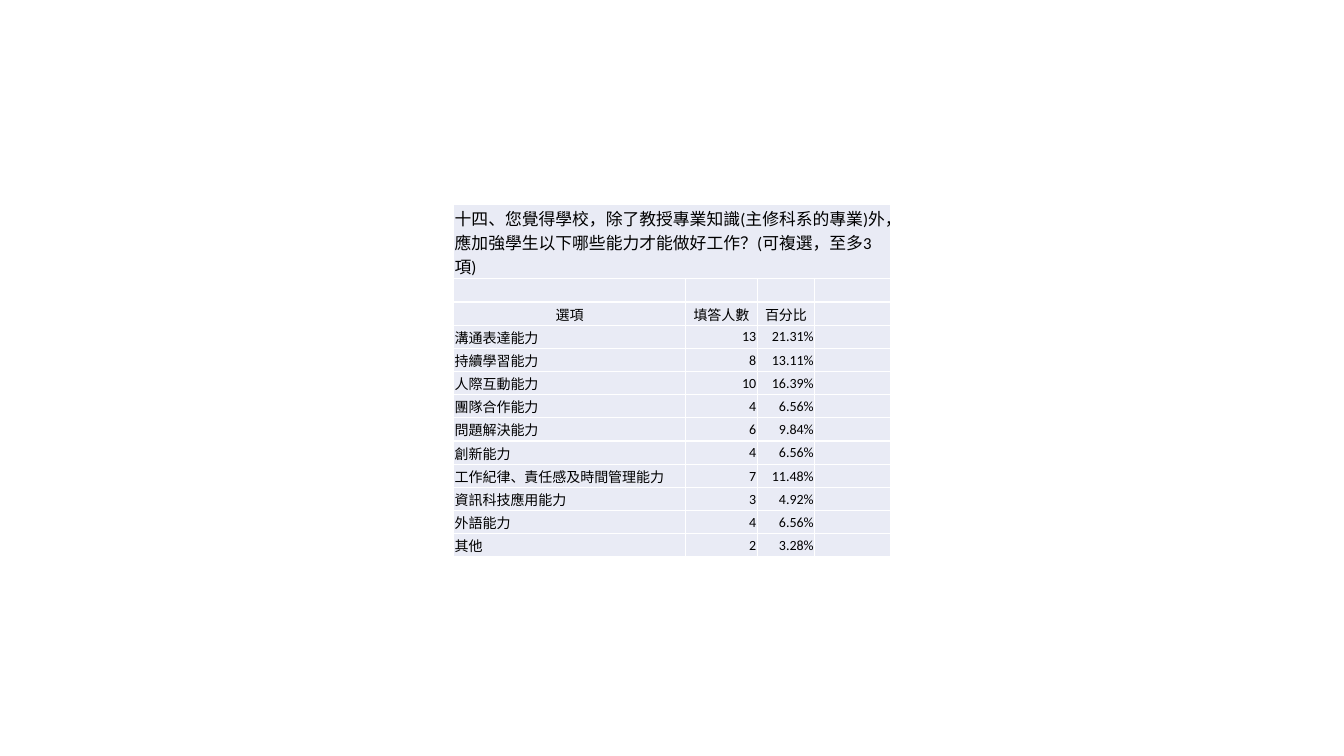
from dataclasses import dataclass
from lxml.etree import SubElement
from pptx import Presentation
from pptx.dml.color import RGBColor
from pptx.enum.text import MSO_ANCHOR, PP_ALIGN
from pptx.oxml.ns import qn
from pptx.util import Inches, Pt


@dataclass(frozen=True)
class Theme:
    font: str = "Calibri"
    ink: str = "000000"
    cell: str = "E9EBF5"
    border: str = "FFFFFF"
    question_size: int = 12
    body_size: int = 10


THEME = Theme()
QUESTION = "十四、您覺得學校，除了教授專業知識(主修科系的專業)外，應加強學生以下哪些能力才能做好工作？(可複選，至多3項)"
HEADINGS = ("選項", "填答人數", "百分比", "")
ANSWERS = [
    ("溝通表達能力", "13", "21.31%"),
    ("持續學習能力", "8", "13.11%"),
    ("人際互動能力", "10", "16.39%"),
    ("團隊合作能力", "4", "6.56%"),
    ("問題解決能力", "6", "9.84%"),
    ("創新能力", "4", "6.56%"),
    ("工作紀律、責任感及時間管理能力", "7", "11.48%"),
    ("資訊科技應用能力", "3", "4.92%"),
    ("外語能力", "4", "6.56%"),
    ("其他", "2", "3.28%"),
]
COLUMN_WIDTHS = (2.3, 0.71, 0.57, 0.75)
QUESTION_HEIGHT = 0.69
ROW_HEIGHT = 0.23


def style_cell(cell, text, size, align):
    properties = cell._tc.get_or_add_tcPr()
    for side in ("a:lnL", "a:lnR", "a:lnT", "a:lnB"):
        line = SubElement(properties, qn(side), w=str(Pt(1)))
        fill = SubElement(line, qn("a:solidFill"))
        SubElement(fill, qn("a:srgbClr"), val=THEME.border)
    cell.fill.solid()
    cell.fill.fore_color.rgb = RGBColor.from_string(THEME.cell)
    cell.vertical_anchor = MSO_ANCHOR.MIDDLE
    cell.margin_left = cell.margin_right = cell.margin_top = Inches(0.01)
    cell.margin_bottom = 0
    para = cell.text_frame.paragraphs[0]
    para.alignment = align
    para.font.name = THEME.font
    para.font.size = Pt(size)
    para.font.color.rgb = RGBColor.from_string(THEME.ink)
    if text:
        para.add_run().text = text
    else:
        SubElement(para._p, qn("a:endParaRPr"), sz=str(size * 100))


def add_survey_table(page, left, top):
    rows = [(QUESTION, "", "", ""), ("",) * 4, HEADINGS]
    rows += [(*answer, "") for answer in ANSWERS]
    heights = [QUESTION_HEIGHT] + [ROW_HEIGHT] * (len(rows) - 1)
    table = page.shapes.add_table(
        len(rows), len(COLUMN_WIDTHS), Inches(left), Inches(top),
        Inches(sum(COLUMN_WIDTHS)), Inches(sum(heights)),
    ).table
    table.first_row = table.horz_banding = False
    for column, width in zip(table.columns, COLUMN_WIDTHS):
        column.width = Inches(width)
    for row_index, (values, height) in enumerate(zip(rows, heights)):
        table.rows[row_index].height = Inches(height)
        size = THEME.question_size if row_index == 0 else THEME.body_size
        for column_index, text in enumerate(values):
            if values is HEADINGS:
                align = PP_ALIGN.CENTER
            else:
                align = PP_ALIGN.RIGHT if column_index else PP_ALIGN.LEFT
            style_cell(table.cell(row_index, column_index), text, size, align)
    table.cell(0, 0).merge(table.cell(0, len(COLUMN_WIDTHS) - 1))


def main():
    deck = Presentation()
    deck.slide_width, deck.slide_height = Inches(13.33), Inches(7.5)
    page = deck.slides.add_slide(deck.slide_layouts[6])
    add_survey_table(page, 4.5, 2.03)
    deck.save("out.pptx")


if __name__ == "__main__":
    main()
